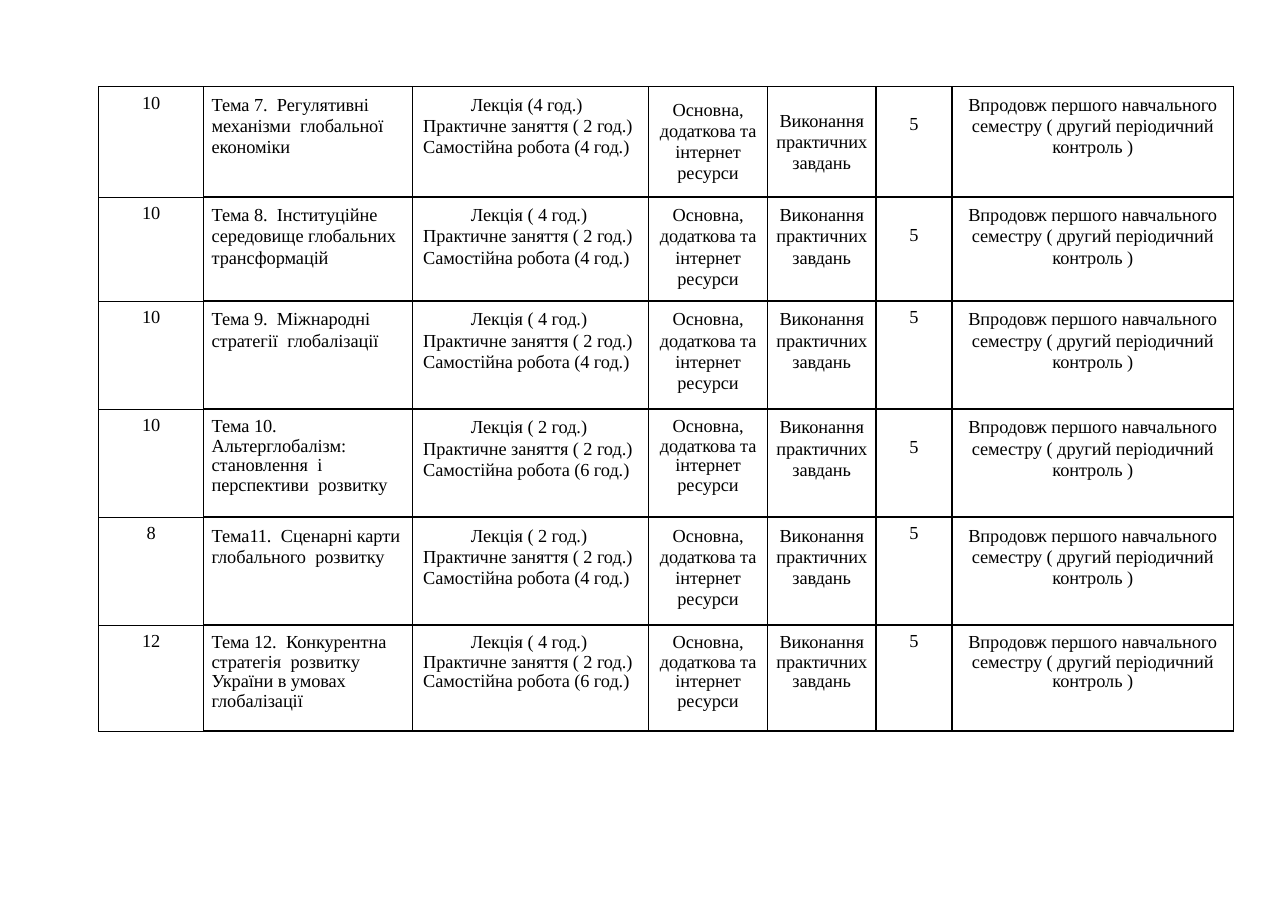
import pptx
import pptx.dml.color
import pptx.enum.text
import pptx.oxml
import pptx.oxml.ns
import pptx.util

Cm = pptx.util.Cm
Pt = pptx.util.Pt
BLACK = pptx.dml.color.RGBColor(0x00, 0x00, 0x00)
FONT = "Times New Roman"
LEFT = pptx.enum.text.PP_ALIGN.LEFT
CENTER = pptx.enum.text.PP_ALIGN.CENTER

RESOURCES = "Основна, додаткова та інтернет ресурси"
TASK = "Виконання практичних завдань"
POINTS = "5"
DEADLINE = "Впродовж першого навчального семестру ( другий періодичний контроль )"
ACTIVITIES = "Лекція {} год.) Практичне заняття ( 2 год.) Самостійна робота ({} год.)"

# hours, topic parts set apart by a wide gap, lecture, self-study, row height in cm
TOPICS = [
    ("10", ["Тема 7.", "Регулятивні механізми", "глобальної економіки"], "(4", 4, 2.54),
    ("10", ["Тема 8.", "Інституційне середовище глобальних трансформацій"], "( 4", 4, 2.4),
    ("10", ["Тема 9.", "Міжнародні стратегії", "глобалізації"], "( 4", 4, 2.49),
    ("10", ["Тема 10. Альтерглобалізм: становлення", "і перспективи", "розвитку"], "( 2", 6, 2.49),
    ("8", ["Тема11.", "Сценарні карти глобального", "розвитку"], "( 2", 4, 2.49),
    ("12", ["Тема 12.", "Конкурентна стратегія", "розвитку України в умовах глобалізації"], "( 4", 6, 2.44),
]

HOURS_COL, TOPIC_COL, ACTIVITY_COL, RESOURCE_COL, TASK_COL, POINTS_COL, DEADLINE_COL = range(7)
COLUMNS = [
    {"width": 2.43, "align": CENTER, "top": 0.15, "margins": (0, 0)},
    {"width": 4.81, "align": LEFT, "top": 0.18, "margins": (0.18, 0.13)},
    {"width": 5.45, "align": LEFT, "top": 0.18, "margins": (0.25, 0), "indent": 1.1},
    {"width": 2.74, "align": CENTER, "top": 0.18, "margins": (0.25, 0.25)},
    {"width": 2.5, "align": CENTER, "top": 0.18, "margins": (0.16, 0.16)},
    {"width": 1.75, "align": CENTER, "top": 0.15, "margins": (0, 0)},
    {"width": 6.5, "align": CENTER, "top": 0.18, "margins": (0.25, 0.25)},
]
LOWERED_TOPS = {
    (0, RESOURCE_COL): 0.28,
    (0, TASK_COL): 0.54,
    (0, POINTS_COL): 0.64,
    (1, POINTS_COL): 0.64,
    (3, POINTS_COL): 0.64,
}
TIGHT_CELLS = {(3, TOPIC_COL), (3, RESOURCE_COL)} | {
    (5, col) for col in (TOPIC_COL, ACTIVITY_COL, RESOURCE_COL, TASK_COL, DEADLINE_COL)
}
LINE_SPACING = Pt(13.8)
TIGHT_SPACING = 0.96
LETTER_SPACING = -5
GAP_SPACING = 300


def draw_borders(cell, widths):
    """Give the cell black borders of the given widths in points."""
    for side, width in zip("LRTB", widths):
        cell._tc.get_or_add_tcPr().append(pptx.oxml.parse_xml(
            f'<a:ln{side} {pptx.oxml.ns.nsdecls("a")} w="{Pt(width)}">'
            f'<a:solidFill><a:srgbClr val="{BLACK}"/></a:solidFill></a:ln{side}>'))


def add_run(paragraph, text, spacing):
    """Add one run with its letter spacing in hundredths of a point."""
    run = paragraph.add_run()
    run.text = text
    run.font.name = FONT
    run.font.size = Pt(12)
    run.font.color.rgb = BLACK
    run.font._element.set("spc", str(spacing))


def fill_cell(cell, parts, row, col):
    """Write the text parts into a cell and apply its column's layout."""
    column = COLUMNS[col]
    draw_borders(cell, (0.5, 1, 0.5, 0.5) if col == HOURS_COL else (1, 1, 1, 1))
    cell.fill.background()
    cell.margin_left = cell.margin_right = cell.margin_bottom = 0
    cell.margin_top = Cm(LOWERED_TOPS.get((row, col), column["top"]))
    paragraph = cell.text_frame.paragraphs[0]
    paragraph.alignment = column["align"]
    if col not in (HOURS_COL, POINTS_COL):
        paragraph.line_spacing = TIGHT_SPACING if (row, col) in TIGHT_CELLS else LINE_SPACING
    left, right = column["margins"]
    layout = paragraph._p.get_or_add_pPr()
    layout.set("marL", str(Cm(left)))
    layout.set("marR", str(Cm(right)))
    layout.set("indent", str(Cm(column.get("indent", 0))))
    for index, part in enumerate(parts):
        if index:
            add_run(paragraph, " ", GAP_SPACING)
        add_run(paragraph, part, LETTER_SPACING)


def main():
    """Build the slide with the course schedule table."""
    deck = pptx.Presentation()
    deck.slide_width, deck.slide_height = Cm(29.7), Cm(21)
    slide = deck.slides.add_slide(deck.slide_layouts[6])
    width = sum(column["width"] for column in COLUMNS)
    height = sum(topic[-1] for topic in TOPICS)
    schedule = slide.shapes.add_table(
        len(TOPICS), len(COLUMNS), Cm(2.27), Cm(2), Cm(width), Cm(height)).table
    schedule.first_row = schedule.horz_banding = False
    for col, column in enumerate(COLUMNS):
        schedule.columns[col].width = Cm(column["width"])
    for row, (hours, topic, lecture, self_study, row_height) in enumerate(TOPICS):
        schedule.rows[row].height = Cm(row_height)
        activities = ACTIVITIES.format(lecture, self_study)
        contents = [[hours], topic, [activities], [RESOURCES], [TASK], [POINTS], [DEADLINE]]
        for col, parts in enumerate(contents):
            fill_cell(schedule.cell(row, col), parts, row, col)
    deck.save("out.pptx")


if __name__ == "__main__":
    main()
